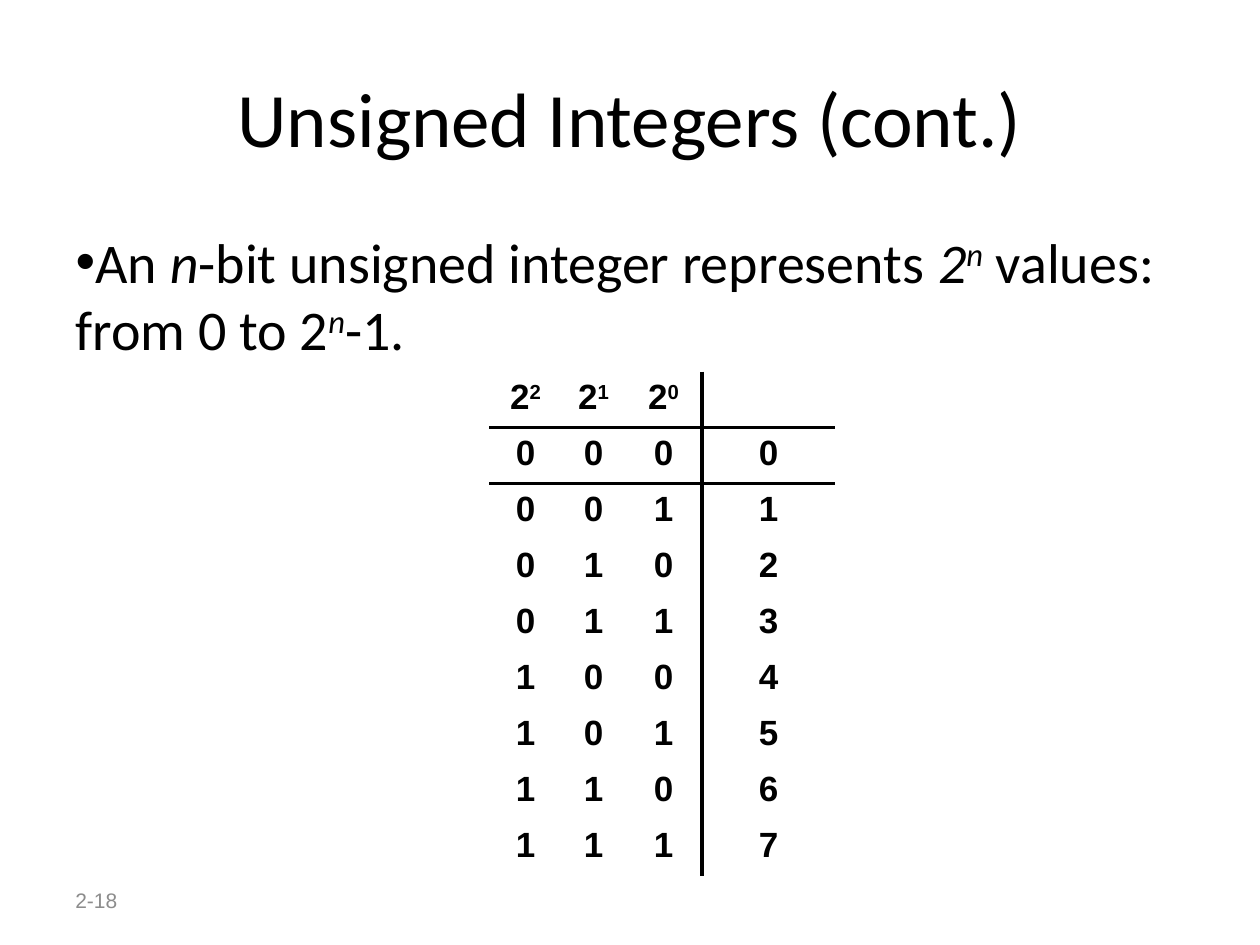
from lxml.etree import SubElement
from pptx import Presentation
from pptx.dml.color import RGBColor
from pptx.enum.text import MSO_ANCHOR, PP_ALIGN
from pptx.oxml.ns import qn
from pptx.util import Cm, Pt

THEME = {
    "head": "Calibri", "cell": "Arial",
    "ink": "000000", "gray": "8C8C8C",
    "title": 44, "body": 32, "table": 20, "foot": 12, "rule": 2.25,
}
TITLE = "Unsigned Integers (cont.)"
BODY = [
    ("An ", ""), ("n", "i"), ("-bit unsigned integer represents ", ""),
    ("2", "i"), ("n", "is"), (" values:", ""), ("", "br"),
    ("from 0 to 2", ""), ("n", "is"), ("-1.", ""),
]
FOOT = "2-18"
BITS = 3
HEAD = [[("2", ""), (str(p), "s")] for p in reversed(range(BITS))] + [[]]
ROWS = [HEAD] + [
    [[(mark, "")] for mark in [*f"{n:0{BITS}b}", str(n)]] for n in range(2 ** BITS)
]
COLS = (1.47, 1.27, 1.55, 2.69)
ROW = 1.13
PLAIN = "{2D5ABB26-0587-4C30-8999-92F81FD0307C}"


def place(shape, left, top, width, height):
    shape.left, shape.top = Cm(left), Cm(top)
    shape.width, shape.height = Cm(width), Cm(height)


def write(para, runs, face, size, color="ink", bold=False, align=PP_ALIGN.LEFT):
    para.alignment = align
    font = para.font
    font.name, font.size, font.bold = THEME[face], Pt(THEME[size]), bold
    font.color.rgb = RGBColor.from_string(THEME[color])
    for text, style in runs:
        if style == "br":
            para.add_line_break()
            continue
        run = para.add_run()
        run.text = text
        if "i" in style:
            run.font.italic = True
        if "s" in style:
            run.font._element.set("baseline", "30000")


def border(cell, sides):
    props = cell._tc.get_or_add_tcPr()
    for side in sides:
        line = SubElement(props, qn(f"a:ln{side}"), w=str(Pt(THEME["rule"])))
        fill = SubElement(line, qn("a:solidFill"))
        SubElement(fill, qn("a:srgbClr"), val=THEME["ink"])


def grid(slide):
    frame = slide.shapes.add_table(
        len(ROWS), len(COLS), Cm(9.86), Cm(7.49), Cm(sum(COLS)), Cm(ROW * len(ROWS)))
    table = frame.table
    table.first_row = table.horz_banding = False
    table._tbl.tblPr.find(qn("a:tableStyleId")).text = PLAIN
    for col, width in zip(table.columns, COLS):
        col.width = Cm(width)
    for r, cells in enumerate(ROWS):
        table.rows[r].height = Cm(ROW)
        for c, runs in enumerate(cells):
            cell = table.cell(r, c)
            rules = {"L": c == BITS, "R": c == BITS - 1, "T": r == 1, "B": r == 0}
            border(cell, [side for side, on in rules.items() if on])
            cell.fill.background()
            write(cell.text_frame.paragraphs[0], runs, "cell", "table",
                  bold=True, align=PP_ALIGN.CENTER)


def main():
    deck = Presentation()
    deck.slide_width, deck.slide_height = Cm(25.4), Cm(19.05)
    slide = deck.slides.add_slide(deck.slide_layouts[1])

    foot = slide.shapes.add_textbox(0, 0, 0, 0)
    place(foot, 1.27, 17.65, 5.93, 1.01)
    foot.text_frame.word_wrap = True
    foot.text_frame.vertical_anchor = MSO_ANCHOR.MIDDLE
    write(foot.text_frame.paragraphs[0], [(FOOT, "")], "cell", "foot", "gray")

    title = slide.shapes.title
    place(title, 1.27, 0.76, 22.86, 3.18)
    title.text_frame.vertical_anchor = MSO_ANCHOR.MIDDLE
    write(title.text_frame.paragraphs[0], [(TITLE, "")], "head", "title",
          align=PP_ALIGN.CENTER)

    body = slide.placeholders[1]
    place(body, 1.27, 4.45, 22.86, 12.57)
    para = body.text_frame.paragraphs[0]
    write(para, BODY, "head", "body")
    props = para._p.get_or_add_pPr()
    props.set("marL", "0")
    props.set("indent", "0")

    grid(slide)
    deck.save("out.pptx")


if __name__ == "__main__":
    main()
